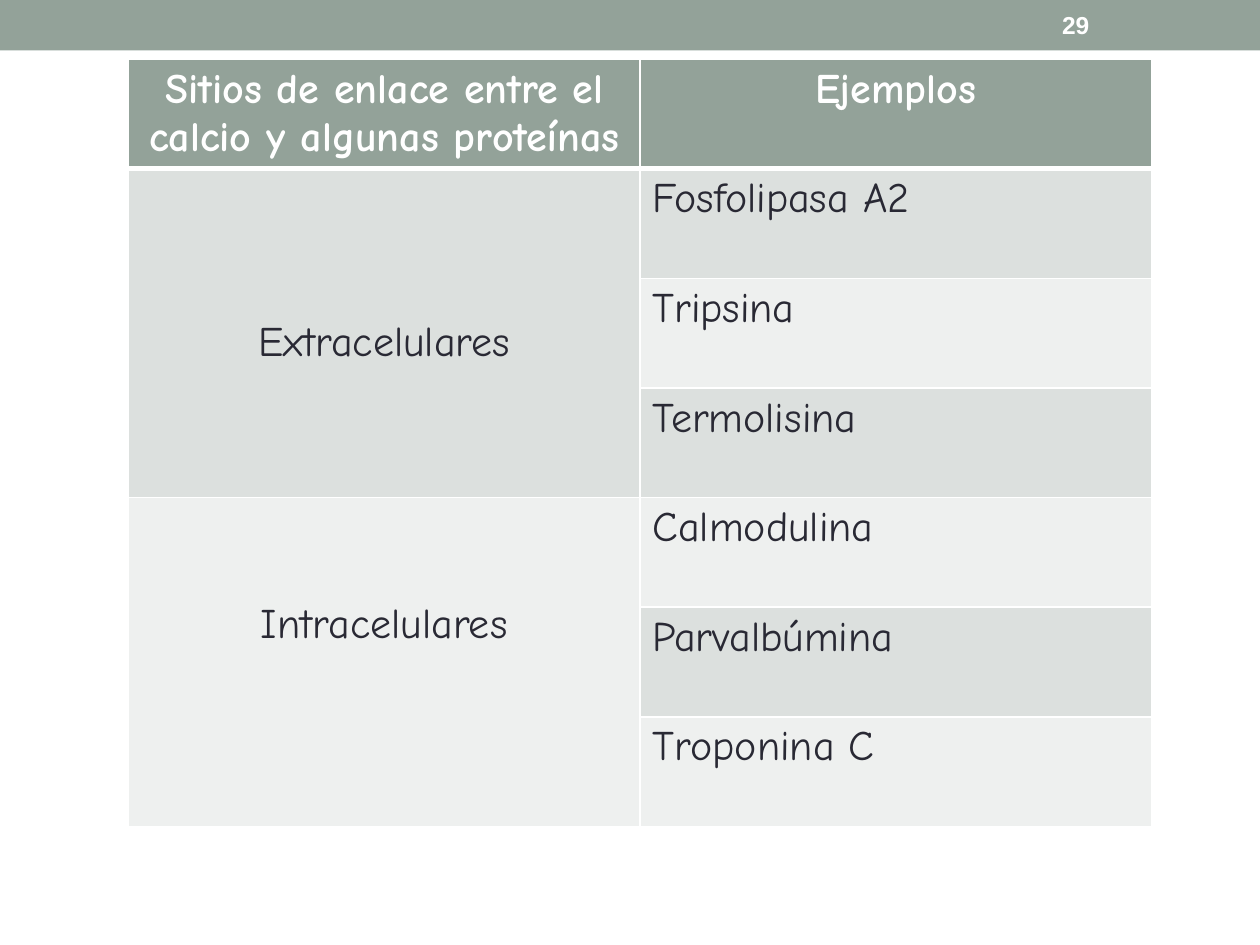
from lxml.etree import SubElement as Sub
from pptx import Presentation
from pptx.dml.color import RGBColor as RGB
from pptx.enum.shapes import MSO_SHAPE as Shape
from pptx.enum.text import MSO_ANCHOR as Anchor, PP_ALIGN as Align
from pptx.oxml.ns import qn
from pptx.util import Cm, Pt

SAGE = RGB(0x93, 0xA2, 0x99)
DARK = RGB(0xDC, 0xE0, 0xDE)
PALE = RGB(0xEE, 0xF0, 0xEF)
INK = RGB(0x29, 0x29, 0x34)
WHITE = RGB(0xFF, 0xFF, 0xFF)

HEADS = ["Sitios de enlace entre el calcio y algunas proteínas", "Ejemplos"]
# Site, its fill, space above its name, its examples
SITES = [
    ("Extracelulares", DARK, Cm(3.03),
     ["Fosfolipasa A2", "Tripsina", "Termolisina"]),
    ("Intracelulares", PALE, Cm(2.08),
     ["Calmodulina", "Parvalbúmina", "Troponina C"]),
]
ROW = Cm(2.21)
COL = Cm(10.31)


def write(frame, text, face, size, color, bold=False, align=Align.LEFT):
    frame.text = text
    par = frame.paragraphs[0]
    par.alignment = align
    font = par.font
    font.name, font.size, font.bold = face, Pt(size), bold
    font.color.rgb = color


def add_bar(slide, width):
    bar = slide.shapes.add_shape(Shape.RECTANGLE, 0, 0, width, Cm(1.02))
    bar.shadow.inherit = False
    bar.fill.solid()
    bar.fill.fore_color.rgb = SAGE
    bar.line.fill.background()


def add_number(slide, text):
    box = slide.shapes.add_textbox(Cm(21.16), Cm(0.05), Cm(2.97), Cm(0.91))
    frame = box.text_frame
    frame.word_wrap = True
    frame.vertical_anchor = Anchor.MIDDLE
    write(frame, text, "Arial", 14, WHITE, bold=True)


def add_edges(cell, top, base):
    props = cell._tc.get_or_add_tcPr()
    for side, width in (("L", 1), ("R", 1), ("T", top), ("B", base)):
        line = Sub(props, qn(f"a:ln{side}"), w=str(Pt(width)))
        fill = Sub(line, qn("a:solidFill"))
        Sub(fill, qn("a:srgbClr"), val=str(WHITE))


def paint(cell, fill):
    cell.fill.solid()
    cell.fill.fore_color.rgb = fill


def fill_cell(cell, text, fill, color=INK, bold=False, align=Align.LEFT):
    paint(cell, fill)
    write(cell.text_frame, text, "Comic Neue", 24, color, bold, align)


def add_grid(slide):
    count = 1 + sum(len(names) for *_, names in SITES)
    grid = slide.shapes.add_table(
        count, 2, Cm(2.59), Cm(1.19), 2 * COL, count * ROW).table
    for col in grid.columns:
        col.width = COL
    for num, row in enumerate(grid.rows):
        row.height = ROW
        for cell in row.cells:
            add_edges(cell, 3 if num == 1 else 1, 3 if num == 0 else 1)

    # Heading row
    for num, head in enumerate(HEADS):
        fill_cell(grid.cell(0, num), head, SAGE, WHITE, True, Align.CENTER)

    # Each site spans its examples, which are banded
    row = 1
    for site, fill, gap, names in SITES:
        first = grid.cell(row, 0)
        first.merge(grid.cell(row + len(names) - 1, 0))
        fill_cell(first, site, fill, align=Align.CENTER)
        first.margin_top = gap
        for name in names:
            if not grid.cell(row, 0).is_merge_origin:
                paint(grid.cell(row, 0), fill)
            fill_cell(grid.cell(row, 1), name, DARK if row % 2 else PALE)
            row += 1


def main():
    deck = Presentation()
    deck.slide_width, deck.slide_height = Cm(25.4), Cm(19.05)
    slide = deck.slides.add_slide(deck.slide_layouts[6])
    add_bar(slide, deck.slide_width)
    add_grid(slide)
    add_number(slide, "29")
    deck.save("out.pptx")


if __name__ == "__main__":
    main()
